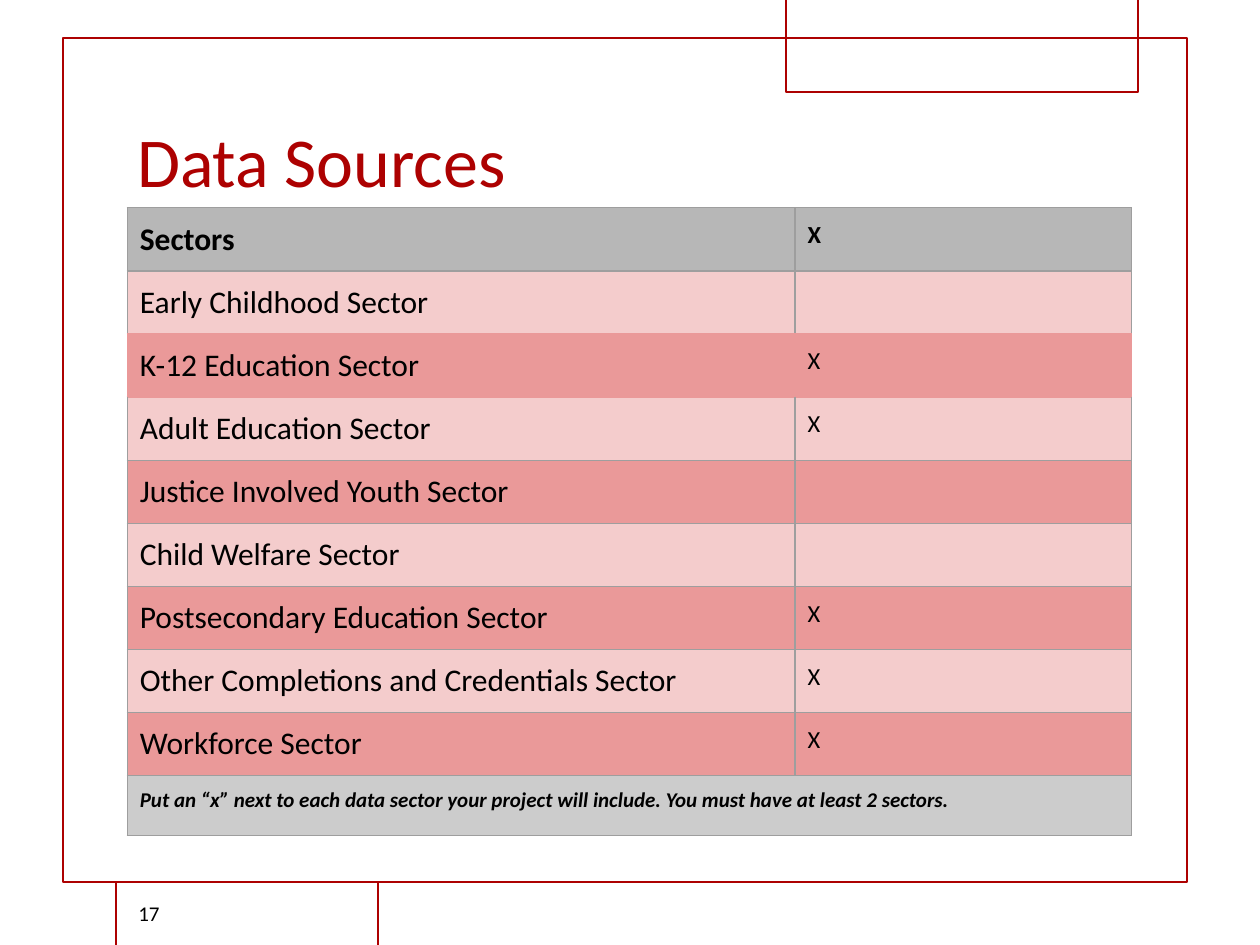
from dataclasses import dataclass

from lxml.etree import SubElement
from pptx import Presentation
from pptx.dml.color import RGBColor
from pptx.enum.shapes import MSO_SHAPE
from pptx.enum.text import MSO_ANCHOR
from pptx.oxml.ns import qn
from pptx.util import Inches, Pt


@dataclass(frozen=True)
class Theme:
    font: str = "Calibri"
    accent: str = "AD0101"
    text: str = "000000"
    paper: str = "FFFFFF"
    header: str = "B7B7B7"
    light: str = "F4CCCC"
    dark: str = "EA9999"
    footer: str = "CCCCCC"
    border: str = "9E9E9E"
    title_size: int = 40
    sector_size: int = 18
    mark_size: int = 14
    note_size: int = 12


theme = Theme()


def add_text(frame, text, size, color=theme.text, bold=False, italic=False):
    run = frame.paragraphs[0].add_run()
    run.text = text
    run.font.name = theme.font
    run.font.size = Pt(size)
    run.font.bold = bold
    run.font.italic = italic
    run.font.color.rgb = RGBColor.from_string(color)


def style_cell(cell, fill, borders):
    """Set margins, four borders (left, right, top, bottom) and then the fill."""
    cell.margin_left = cell.margin_right = Inches(0.1)
    cell.margin_top = cell.margin_bottom = Inches(0.1)
    properties = cell._tc.get_or_add_tcPr()
    for side, color in zip("LRTB", borders):
        line = SubElement(properties, qn(f"a:ln{side}"), w=str(Pt(0.75)))
        solid = SubElement(line, qn("a:solidFill"))
        SubElement(solid, qn("a:srgbClr"), val=color)
    cell.fill.solid()
    cell.fill.fore_color.rgb = RGBColor.from_string(fill)


presentation = Presentation()
presentation.slide_width = Inches(10)
presentation.slide_height = Inches(7.5)
slide = presentation.slides.add_slide(presentation.slide_layouts[6])

# Decorative frames: left, top, width, height, filled
frames = [
    (0.5, 0.3, 8.92, 6.7, True),
    (0.92, 7, 2.08, 0.51, True),
    (6.24, -0.01, 2.79, 0.74, False),
]
for *box, filled in frames:
    shape = slide.shapes.add_shape(MSO_SHAPE.RECTANGLE, *map(Inches, box))
    shape.shadow.inherit = False
    shape.line.color.rgb = RGBColor.from_string(theme.accent)
    shape.line.width = Pt(1.25)
    if filled:
        shape.fill.solid()
        shape.fill.fore_color.rgb = RGBColor.from_string(theme.paper)
    else:
        shape.fill.background()

# Title and page number
labels = [
    ((0.99, 0.39, 8.02, 1.26), "Data Sources", theme.title_size, theme.accent, MSO_ANCHOR.BOTTOM),
    ((1, 7.05, 0.67, 0.4), "17", theme.note_size, theme.text, MSO_ANCHOR.MIDDLE),
]
for box, text, size, color, anchor in labels:
    frame = slide.shapes.add_textbox(*map(Inches, box)).text_frame
    frame.word_wrap = True
    frame.vertical_anchor = anchor
    add_text(frame, text, size, color)

# Sector table
rows = [
    ("Sectors", "X"),
    ("Early Childhood Sector", ""),
    ("K-12 Education Sector", "X"),
    ("Adult Education Sector", "X"),
    ("Justice Involved Youth Sector", ""),
    ("Child Welfare Sector", ""),
    ("Postsecondary Education Sector", "X"),
    ("Other Completions and Credentials Sector", "X"),
    ("Workforce Sector", "X"),
]
note = "Put an “x” next to each data sector your project will include. You must have at least 2 sectors."
note_row = len(rows)
highlighted_row = 2

table = slide.shapes.add_table(
    note_row + 1, 2, Inches(1.01), Inches(1.65), Inches(7.97), Inches(4.89)
).table
for column, width in zip(table.columns, (5.3, 2.67)):
    column.width = Inches(width)
for row in table.rows:
    row.height = Inches(0.49)
table.rows[note_row].height = Inches(0.48)

for row_index in range(note_row + 1):
    if row_index == 0:
        fill = theme.header
    elif row_index == note_row:
        fill = theme.footer
    else:
        fill = theme.light if row_index % 2 else theme.dark
    side = theme.dark if row_index == highlighted_row else theme.border
    top = theme.dark if row_index in (highlighted_row, highlighted_row + 1) else theme.border
    bottom = theme.dark if row_index in (highlighted_row - 1, highlighted_row) else theme.border
    for cell in table.rows[row_index].cells:
        style_cell(cell, fill, (side, side, top, bottom))

for row_index, (sector, mark) in enumerate(rows):
    is_header = row_index == 0
    add_text(table.cell(row_index, 0).text_frame, sector, theme.sector_size, bold=is_header)
    if mark:
        add_text(table.cell(row_index, 1).text_frame, mark, theme.mark_size, bold=is_header)

note_cell = table.cell(note_row, 0)
note_cell.merge(table.cell(note_row, 1))
add_text(note_cell.text_frame, note, theme.note_size, bold=True, italic=True)

presentation.save("out.pptx")
